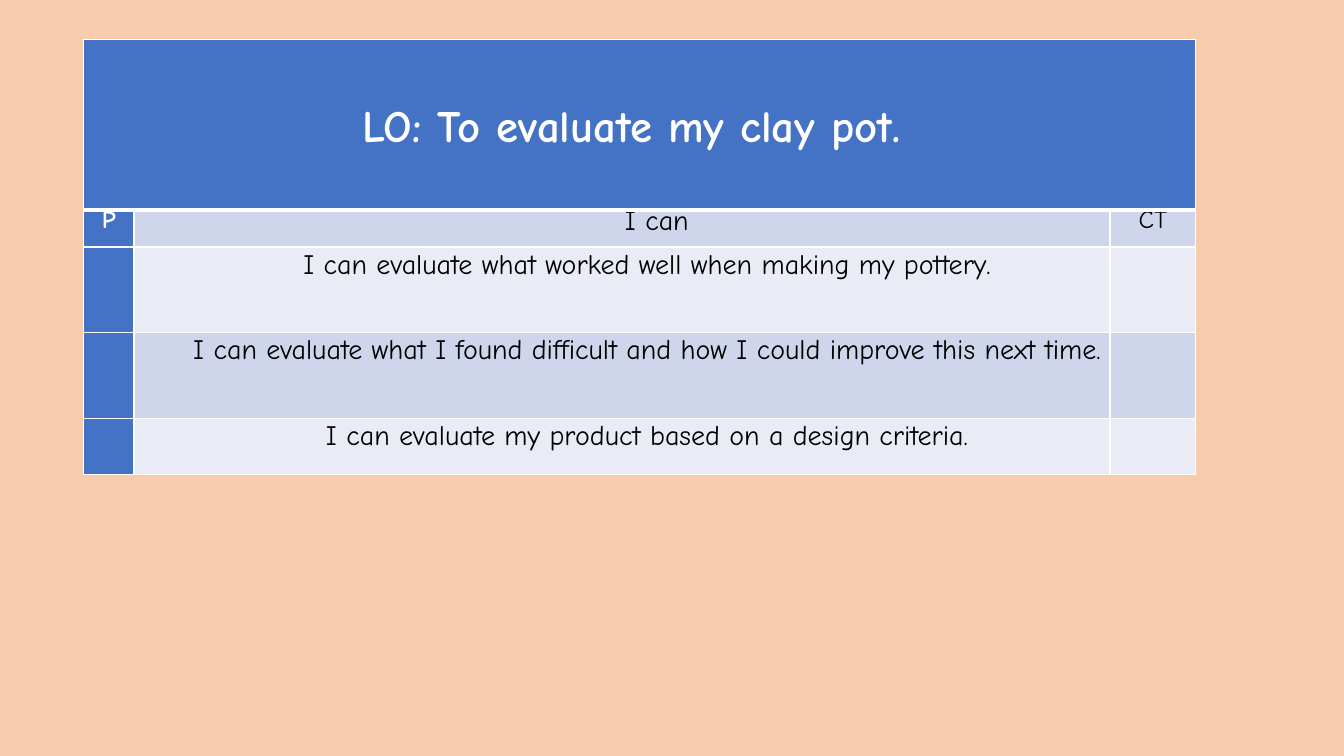
from lxml.etree import SubElement
from pptx import Presentation
from pptx.dml.color import RGBColor
from pptx.enum.text import MSO_ANCHOR, PP_ALIGN
from pptx.oxml.ns import qn
from pptx.util import Inches, Pt

PEACH = RGBColor(0xF8, 0xCB, 0xAD)
BLUE = RGBColor(0x44, 0x72, 0xC4)
BAND_DARK = RGBColor(0xCF, 0xD5, 0xEA)
BAND_LIGHT = RGBColor(0xE9, 0xEB, 0xF5)
WHITE = RGBColor(0xFF, 0xFF, 0xFF)
BLACK = RGBColor(0, 0, 0)
FONT = "Comic Neue"

COLUMN_WIDTHS = [0.5, 9.68, 0.85]
ROW_HEIGHTS = [1.69, 0.37, 0.85, 0.85, 0.56]
OBJECTIVE = "LO: To evaluate my clay pot. "
CRITERIA = [
    "I can evaluate what worked well when making my pottery.",
    "I can evaluate what I found difficult and how I could improve this next time.",
    "I can evaluate my product based on a design criteria.",
]

# Text formats: font values, paragraph values and left indent in inches
OBJECTIVE_FORMAT = {"font": {"size": Pt(32), "bold": True}, "color": WHITE,
                    "paragraph": {"line_spacing": 1.15}}
PUPIL_FORMAT = {"font": {"size": Pt(18), "bold": True}, "color": WHITE,
                "paragraph": {"line_spacing": 0.8}}
TEACHER_FORMAT = {"font": {"size": Pt(18), "bold": False}, "color": BLACK,
                  "paragraph": {"line_spacing": 0.8}}
HEADING_FORMAT = {"font": {"size": Pt(20), "bold": False}, "color": BLACK,
                  "paragraph": {"line_spacing": 0.8}, "indent": 0.69}
CRITERION_FORMAT = {"font": {"size": Pt(20), "bold": False}, "color": BLACK,
                    "paragraph": {"line_spacing": 1.06, "space_after": Pt(8)},
                    "indent": 0.5}


class LessonSlide:
    def __init__(self, deck, background):
        self.slide = deck.slides.add_slide(deck.slide_layouts[6])
        self.slide.background.fill.solid()
        self.slide.background.fill.fore_color.rgb = background

    def table(self, left, top, widths, heights):
        grid = self.slide.shapes.add_table(
            len(heights), len(widths), Inches(left), Inches(top),
            Inches(sum(widths)), Inches(sum(heights))).table
        grid.first_row = grid.horz_banding = False
        for column, width in zip(grid.columns, widths):
            column.width = Inches(width)
        for row, height in zip(grid.rows, heights):
            row.height = Inches(height)
        return grid

    def cell(self, cell, fill, top=1, bottom=1):
        margins = {"margin_left": Inches(0.07), "margin_right": Inches(0.07),
                   "margin_top": 0, "margin_bottom": 0}
        for name, value in margins.items():
            setattr(cell, name, value)
        properties = cell._tc.get_or_add_tcPr()
        for side, width in {"L": 1, "R": 1, "T": top, "B": bottom}.items():
            border = SubElement(properties, qn(f"a:ln{side}"), w=str(Pt(width)))
            paint = SubElement(border, qn("a:solidFill"))
            SubElement(paint, qn("a:srgbClr"), val=str(WHITE))
        cell.fill.solid()
        cell.fill.fore_color.rgb = fill

    def text(self, cell, wording, style):
        paragraph = cell.text_frame.paragraphs[0]
        paragraph.alignment = PP_ALIGN.CENTER
        for name, value in style["paragraph"].items():
            setattr(paragraph, name, value)
        if "indent" in style:
            properties = paragraph._p.get_or_add_pPr()
            properties.set("marL", str(Inches(style["indent"])))
            properties.set("indent", "0")
        run = paragraph.add_run()
        run.text = wording
        for name, value in {"name": FONT, **style["font"]}.items():
            setattr(run.font, name, value)
        run.font.color.rgb = style["color"]


def main():
    deck = Presentation()
    deck.slide_width, deck.slide_height = Inches(13.33), Inches(7.5)
    lesson = LessonSlide(deck, PEACH)
    checklist = lesson.table(0.83, 0.39, COLUMN_WIDTHS, ROW_HEIGHTS)

    # Cell fills and borders: blue objective row and pupil column, banded rest
    for row in range(len(ROW_HEIGHTS)):
        band = BAND_DARK if row % 2 else BAND_LIGHT
        for column in range(len(COLUMN_WIDTHS)):
            lesson.cell(checklist.cell(row, column),
                        BLUE if row == 0 or column == 0 else band,
                        top=3 if row == 1 else 1, bottom=3 if row == 0 else 1)

    # Learning objective
    objective = checklist.cell(0, 0)
    objective.merge(checklist.cell(0, 2))
    objective.vertical_anchor = MSO_ANCHOR.MIDDLE
    lesson.text(objective, OBJECTIVE, OBJECTIVE_FORMAT)

    # Column headings
    headings = [("P", PUPIL_FORMAT), ("I can", HEADING_FORMAT), ("CT", TEACHER_FORMAT)]
    for column, (wording, style) in enumerate(headings):
        lesson.text(checklist.cell(1, column), wording, style)

    # Success criteria
    for row, criterion in enumerate(CRITERIA, start=2):
        lesson.text(checklist.cell(row, 1), criterion, CRITERION_FORMAT)

    deck.save("out.pptx")


if __name__ == "__main__":
    main()
